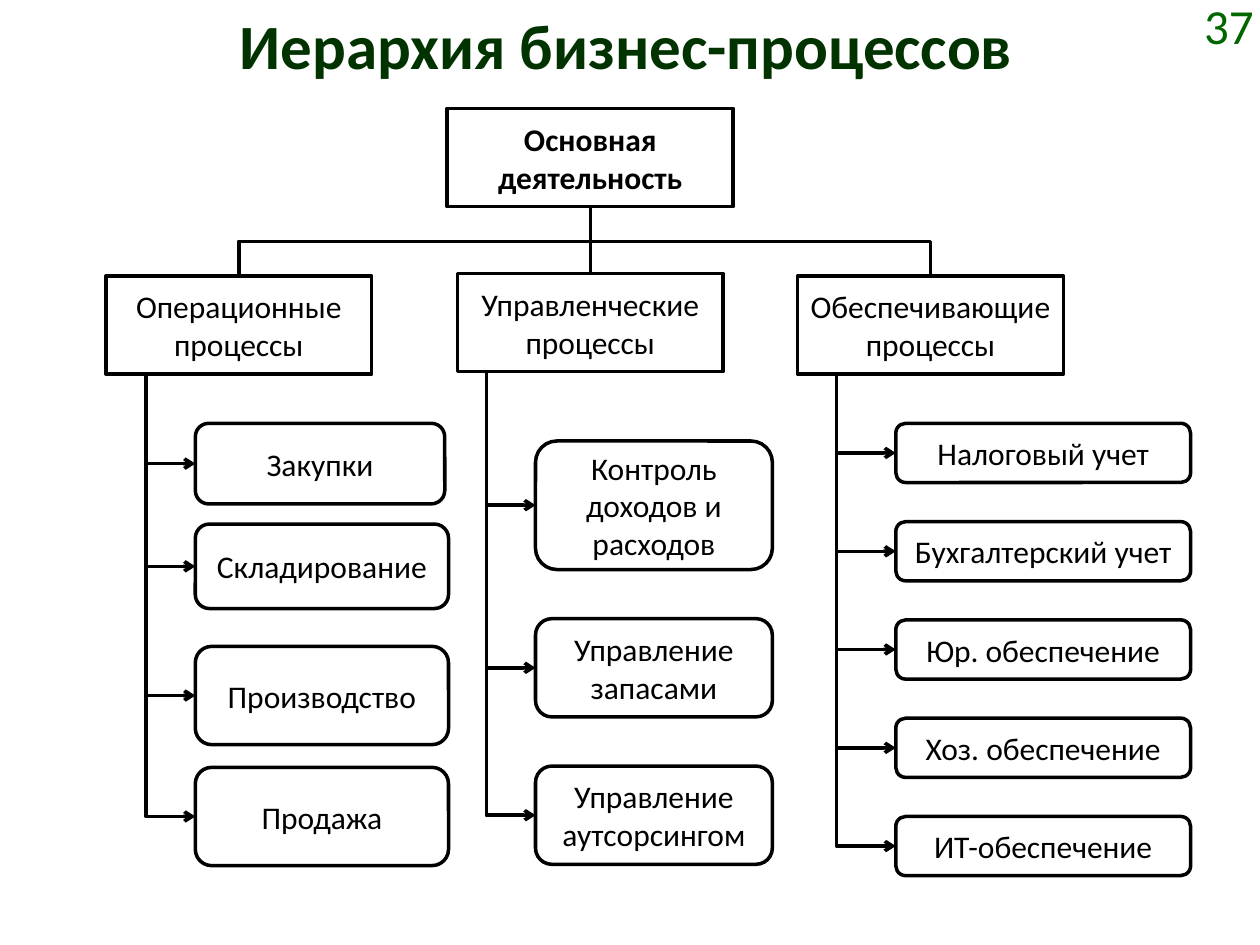
from pptx import Presentation
from pptx.dml.color import RGBColor
from pptx.enum.shapes import MSO_CONNECTOR, MSO_SHAPE
from pptx.enum.text import MSO_ANCHOR, PP_ALIGN
from pptx.oxml.ns import qn
from pptx.util import Inches, Pt
from lxml import etree

RECT, ROUNDED = MSO_SHAPE.RECTANGLE, MSO_SHAPE.ROUNDED_RECTANGLE
STRAIGHT, ELBOW = MSO_CONNECTOR.STRAIGHT, MSO_CONNECTOR.ELBOW
TOP, MIDDLE = MSO_ANCHOR.TOP, MSO_ANCHOR.MIDDLE
CENTER, RIGHT = PP_ALIGN.CENTER, PP_ALIGN.RIGHT
TOP_SIDE, BOTTOM_SIDE = 0, 2
TITLE_ONLY = 5

BRANCH_WIDTH, BOX_HEIGHT = 2.11, 0.78
ROOT_BOX = (3.55, 0.86, 2.27, BOX_HEIGHT)

# Each branch: text, left, top, trunk x, leaf left, leaves (text, top, width, height)
BRANCHES = [
    ("Операционные процессы", 0.84, 2.19, 1.16, 1.55, [
        ("Закупки", 3.36, 1.98, 0.64),
        ("Складирование", 4.16, 2.01, 0.67),
        ("Производство", 5.13, 2.01, BOX_HEIGHT),
        ("Продажа", 6.09, 2.01, BOX_HEIGHT),
    ]),
    ("Управленческие процессы", 3.63, 2.17, 3.86, 4.25, [
        ("Контроль доходов и расходов", 3.5, 1.88, 1.02),
        ("Управление запасами", 4.91, 1.88, BOX_HEIGHT),
        ("Управление аутсорсингом", 6.08, 1.88, BOX_HEIGHT),
    ]),
    ("Обеспечивающие\nпроцессы", 6.33, 2.19, 6.64, 7.11, [
        (text, 3.36 + 0.78 * row, 2.34, 0.47)
        for row, text in enumerate([
            "Налоговый учет", "Бухгалтерский учет", "Юр. обеспечение",
            "Хоз. обеспечение", "ИТ-обеспечение"])
    ]),
]


def rgb(hex_color):
    return RGBColor.from_string(hex_color)


class HierarchySlide:
    font = "Calibri"
    ink, paper = "000000", "FFFFFF"
    title_color, number_color = "003300", "006600"
    line_width = Pt(2)

    def __init__(self, slide):
        self.slide = slide

    def set_text(self, shape, text, size, color, bold=False, align=CENTER, anchor=MIDDLE):
        frame = shape.text_frame
        frame.text = text
        frame.word_wrap = True
        frame.vertical_anchor = anchor
        for paragraph in frame.paragraphs:
            paragraph.alignment = align
            for run in paragraph.runs:
                run.font.name = self.font
                run.font.size = Pt(size)
                run.font.bold = bold
                run.font.color.rgb = rgb(color)

    def title(self, text, *box):
        heading = self.slide.shapes.title
        heading.left, heading.top, heading.width, heading.height = map(Inches, box)
        self.set_text(heading, text, 36, self.title_color, bold=True, anchor=TOP)

    def page_number(self, text, *box):
        number = self.slide.shapes.add_textbox(*map(Inches, box))
        self.set_text(number, text, 28, self.number_color, align=RIGHT)
        number.text_frame.margin_right = Inches(0.05)

    def box(self, text, *box, kind=RECT, bold=False):
        node = self.slide.shapes.add_shape(kind, *map(Inches, box))
        node.shadow.inherit = False
        node.fill.solid()
        node.fill.fore_color.rgb = rgb(self.paper)
        node.line.color.rgb = rgb(self.ink)
        node.line.width = self.line_width
        self.set_text(node, text, 18, self.ink, bold)
        node.text_frame.margin_left = node.text_frame.margin_right = Inches(0.05)
        return node

    def connector(self, kind, *ends):
        link = self.slide.shapes.add_connector(kind, *map(Inches, ends))
        link.line.color.rgb = rgb(self.ink)
        link.line.width = self.line_width
        etree.SubElement(link._element.spPr, qn("a:effectLst"))
        return link

    def straight(self, parent, child):
        link = self.connector(STRAIGHT, 0, 0, 0, 0)
        link.begin_connect(parent, BOTTOM_SIDE)
        link.end_connect(child, TOP_SIDE)

    def elbow(self, x1, y1, x2, y2, arrow=False):
        """Leave (x1, y1) downwards: two bends to a branch, or one with an arrow to a leaf."""
        # The preset leaves sideways, so lay it out turned and rotate it about its middle.
        middle_x, middle_y = (x1 + x2) / 2, (y1 + y2) / 2
        half_width, half_height = (y2 - y1) / 2, abs(x2 - x1) / 2
        rightwards = x2 > x1
        if rightwards:
            half_width = -half_width
        link = self.connector(ELBOW, middle_x - half_width, middle_y - half_height,
                              middle_x + half_width, middle_y + half_height)
        properties = link._element.spPr
        degrees = 270 if rightwards else 90
        properties.find(qn("a:xfrm")).set("rot", str(degrees * 60000))
        if arrow:
            properties.find(qn("a:prstGeom")).set("prst", "bentConnector2")
            etree.SubElement(properties.find(qn("a:ln")), qn("a:tailEnd"), type="arrow")


def main():
    presentation = Presentation()
    presentation.slide_width, presentation.slide_height = Inches(10), Inches(7.5)
    layout = presentation.slide_layouts[TITLE_ONLY]
    page = HierarchySlide(presentation.slides.add_slide(layout))

    page.title("Иерархия бизнес-процессов", 0.47, 0, 9, 0.94)
    page.page_number("37", 8.98, 0, 1.02, 0.39)

    root = page.box("Основная деятельность", *ROOT_BOX, bold=True)
    root_left, root_top, root_width, root_height = ROOT_BOX
    root_center, root_bottom = root_left + root_width / 2, root_top + root_height

    for text, left, top, trunk, leaf_left, leaves in BRANCHES:
        branch = page.box(text, left, top, BRANCH_WIDTH, BOX_HEIGHT)
        center = left + BRANCH_WIDTH / 2
        if abs(center - root_center) < 0.01:
            page.straight(root, branch)
        else:
            page.elbow(root_center, root_bottom, center, top)
        for leaf, leaf_top, width, height in leaves:
            page.box(leaf, leaf_left, leaf_top, width, height, kind=ROUNDED)
            page.elbow(trunk, top + BOX_HEIGHT, leaf_left, leaf_top + height / 2, arrow=True)

    presentation.save("out.pptx")


if __name__ == "__main__":
    main()
